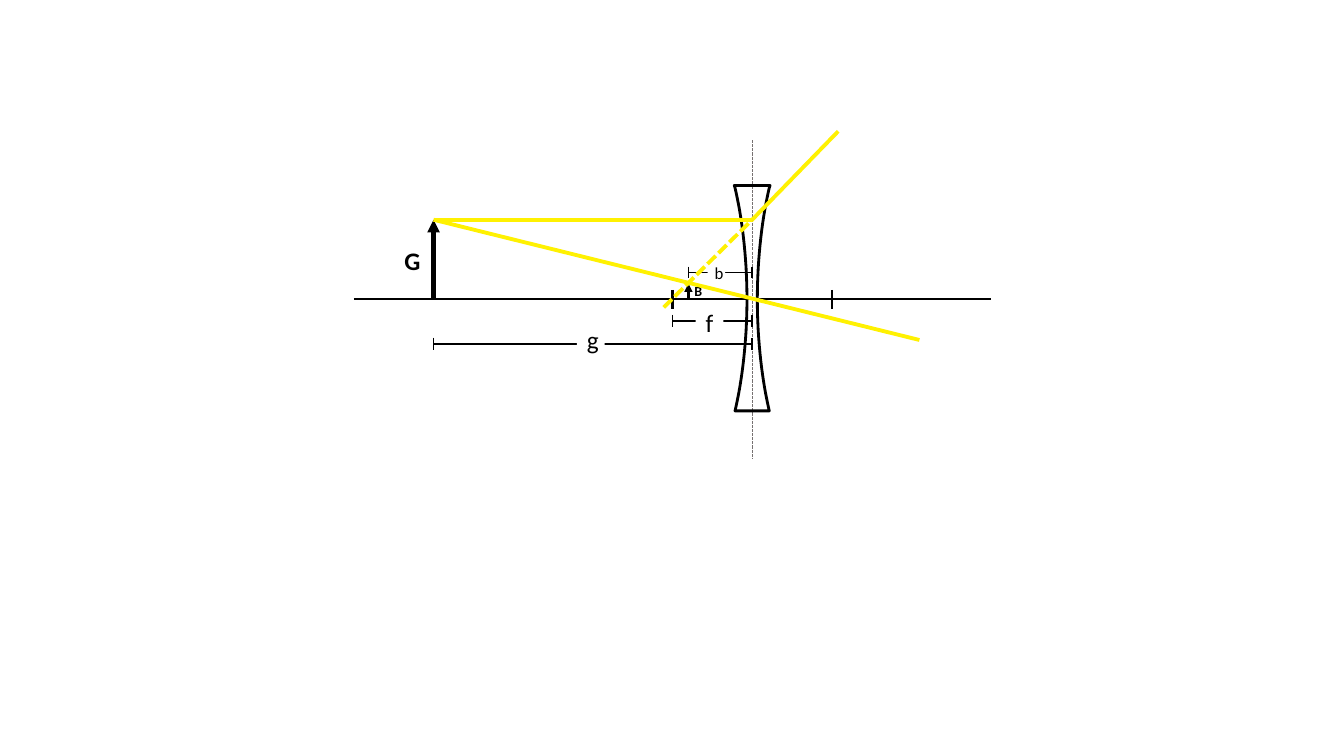
from dataclasses import dataclass

from lxml import etree
from pptx import Presentation
from pptx.dml.color import RGBColor
from pptx.enum.dml import MSO_LINE
from pptx.enum.shapes import MSO_CONNECTOR, MSO_SHAPE
from pptx.enum.text import MSO_ANCHOR, PP_ALIGN
from pptx.oxml.ns import qn
from pptx.util import Inches, Pt

STRAIGHT = MSO_CONNECTOR.STRAIGHT
RECT = MSO_SHAPE.RECTANGLE
DASH = MSO_LINE.SQUARE_DOT
LEFT = PP_ALIGN.LEFT
MIDDLE = MSO_ANCHOR.MIDDLE


@dataclass(frozen=True)
class Theme:
    font: str = "Calibri"
    ink: str = "000000"
    grey: str = "767171"
    ray: str = "FFF101"
    paper: str = "FFFFFF"
    large: int = 18
    mid: int = 12
    small: int = 10


class Bench:
    """Draws on a grid whose cell is one focal length, centred on the lens, y up."""
    cell = 0.79
    left = 7.46
    top = 2.97

    def __init__(self, slide, theme):
        self.shapes = slide.shapes
        self.theme = theme

    def spot(self, x, y):
        return Inches(self.left + x * self.cell), Inches(self.top - y * self.cell)

    def line(self, start, end, width=1, color=None, dash=None, head=False):
        line = self.shapes.add_connector(
            STRAIGHT, *self.spot(*start), *self.spot(*end))
        line.line.color.rgb = RGBColor.from_string(color or self.theme.ink)
        line.line.width = Pt(width)
        if dash:
            line.line.dash_style = dash
        props = line._element.spPr
        if head:
            etree.SubElement(props.find(qn("a:ln")), qn("a:tailEnd"), type="triangle")
        etree.SubElement(props, qn("a:effectLst"))

    def tick(self, x, y, half, width=1):
        self.line((x, y + half), (x, y - half), width)

    def span(self, start, y, half):
        """Measure from start to the lens plane, with a tick at each end."""
        self.line((start, y), (0, y))
        for x in (start, 0):
            self.tick(x, y, half)

    def label(self, text, x, y, wide, high, size, bold=False, fill=False, pad=0.1):
        box = self.shapes.add_shape(RECT, *self.spot(x, y),
                                    Inches(wide * self.cell), Inches(high * self.cell))
        box.shadow.inherit = False
        box.line.fill.background()
        if fill:
            box.fill.solid()
            box.fill.fore_color.rgb = RGBColor.from_string(self.theme.paper)
        else:
            box.fill.background()
        frame = box.text_frame
        frame.text = text
        frame.word_wrap = True
        frame.vertical_anchor = MIDDLE
        frame.margin_left = Inches(pad)
        frame.margin_right = frame.margin_top = frame.margin_bottom = 0
        frame.paragraphs[0].alignment = LEFT
        font = frame.paragraphs[0].runs[0].font
        font.name, font.size, font.bold = self.theme.font, Pt(size), bold
        font.color.rgb = RGBColor.from_string(self.theme.ink)

    def lens(self, waist=0.065, edge=0.215, rim=1.4, steps=16):
        """Outline a concave lens; each quarter is a sampled cubic curve."""
        ends = ((edge, rim), (0.13, 1.04), (waist, 0.54), (waist, 0))
        quart = []
        for i in range(steps + 1):
            t = i / steps
            parts = ((1 - t) ** 3, 3 * t * (1 - t) ** 2, 3 * t * t * (1 - t), t ** 3)
            quart.append(tuple(sum(p * e[k] for p, e in zip(parts, ends))
                               for k in (0, 1)))
        right = [(0.225, 1.43)] + quart + [(x, -y) for x, y in quart[-2::-1]]
        points = [self.spot(x, y)
                  for x, y in right + [(-x, y) for x, y in reversed(right)]]
        pen = self.shapes.build_freeform(*points[0], scale=1.0)
        pen.add_line_segments(points[1:], close=True)
        shape = pen.convert_to_shape()
        shape.shadow.inherit = False
        shape.fill.background()
        shape.line.color.rgb = RGBColor.from_string(self.theme.ink)
        shape.line.width = Pt(2)


def main():
    deck = Presentation()
    deck.slide_width, deck.slide_height = Inches(13.33), Inches(7.5)
    theme = Theme()
    bench = Bench(deck.slides.add_slide(deck.slide_layouts[6]), theme)

    far, near = -4, -0.8
    bench.line((0, 2), (0, -2), 0.75, theme.grey, DASH)
    bench.line((-5, 0), (3, 0), 1.5)
    bench.line((far, 0), (far, 1), 3, head=True)
    bench.label("G", -4.49, 0.75, 0.49, 0.51, theme.large, bold=True)
    bench.lens()
    for focus in (-1, 1):
        bench.tick(focus, 0, 0.12, 1.5)

    bench.span(far, -0.56, 0.08)
    bench.label("g", -2.2, -0.25, 0.35, 0.51, theme.large, fill=True)
    bench.span(-1, -0.27, 0.08)
    bench.label("f", -0.71, -0.03, 0.35, 0.51, theme.large, fill=True)

    bench.line((far, 1), (0, 1), 2.75, theme.ray)
    bench.line((0, 1), (1.08, 2.11), 2.75, theme.ray)
    bench.line((near, 0), (near, 0.2), 2, head=True)
    bench.label("B", -0.85, 0.27, 0.42, 0.34, theme.small, bold=True)
    bench.span(near, 0.34, 0.07)
    bench.label("b", -0.56, 0.53, 0.22, 0.38, theme.mid, fill=True, pad=0.07)
    bench.line((-1.11, -0.1), (0, 1), 2.75, theme.ray, DASH)
    bench.line((far, 1), (2.1, -0.51), 2.75, theme.ray)
    deck.save("out.pptx")


if __name__ == "__main__":
    main()
